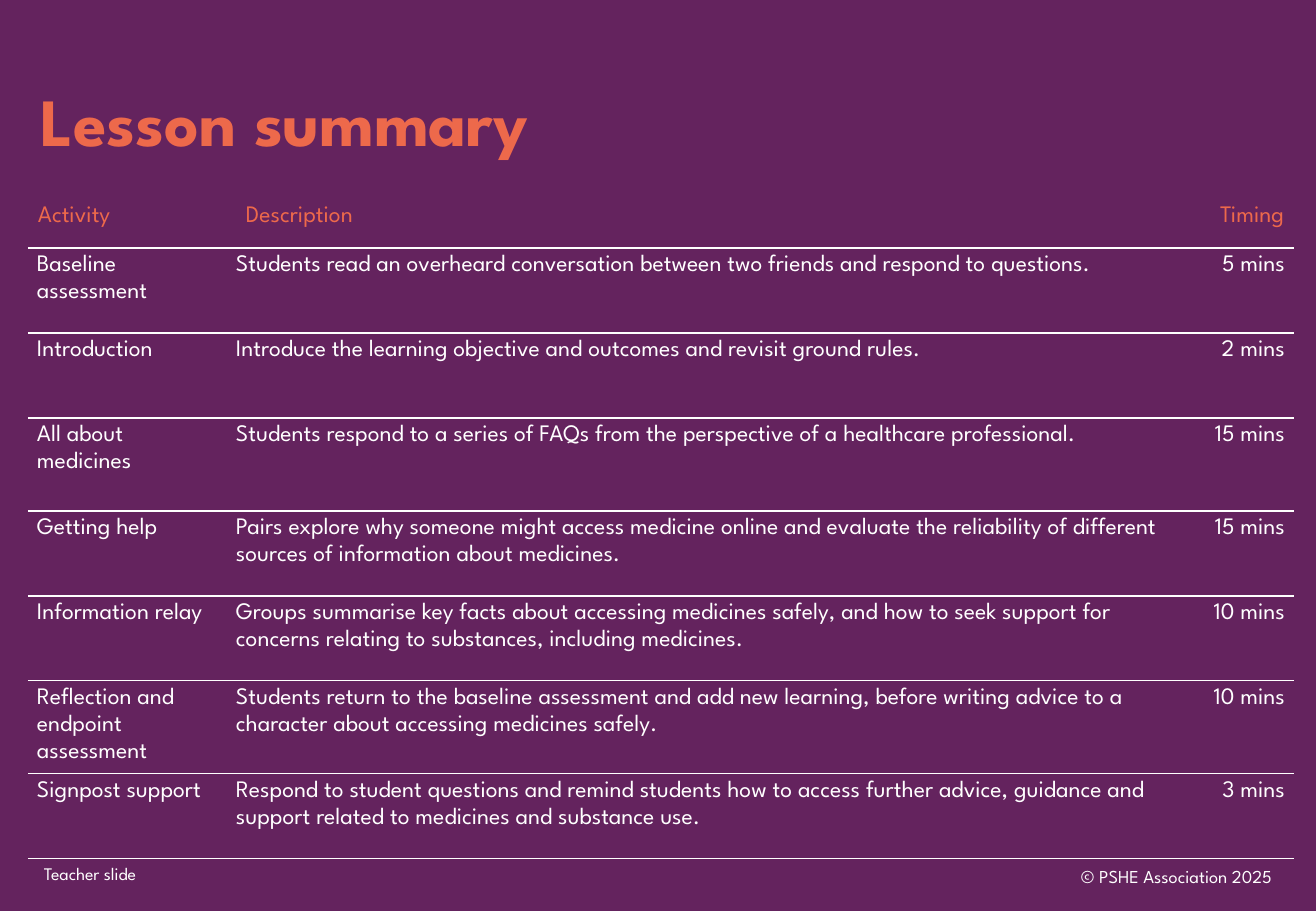
import pptx
import pptx.dml.color
import pptx.enum.text
import pptx.oxml
import pptx.oxml.ns
import pptx.util

SCALE = 914400 / 121.5  # EMU per px
FONT = "League Spartan"
PURPLE, ORANGE, WHITE = "64235E", "ED694B", "FFFFFF"
ALIGN = pptx.enum.text.PP_ALIGN
ANCHOR = pptx.enum.text.MSO_ANCHOR


def px(length):
    return pptx.util.Emu(round(length * SCALE))


def write(paragraph, text, size, colour, align=ALIGN.LEFT, bold=False):
    paragraph.text = text
    paragraph.alignment = align
    font = paragraph.runs[0].font
    font_format = {"name": FONT, "size": pptx.util.Pt(size), "bold": bold}
    for name, value in font_format.items():
        setattr(font, name, value)
    font.color.rgb = pptx.dml.color.RGBColor.from_string(colour)


presentation = pptx.Presentation()
presentation.slide_width, presentation.slide_height = px(1316), px(911)
slide = presentation.slides.add_slide(presentation.slide_layouts[5])
slide.background.fill.solid()
slide.background.fill.fore_color.rgb = pptx.dml.color.RGBColor.from_string(PURPLE)

# Title
title = slide.shapes.title
title_format = {"left": 28, "top": 79, "width": 996, "height": 92}
for name, value in title_format.items():
    setattr(title, name, px(value))
title.text_frame.auto_size = pptx.enum.text.MSO_AUTO_SIZE.NONE
title.text_frame.vertical_anchor = ANCHOR.MIDDLE
write(title.text_frame.paragraphs[0], "Lesson summary", 40, ORANGE, bold=True)
title.text_frame.paragraphs[0].line_spacing = 0.9

# Lesson plan
lesson_rows = [
    ("Activity", "Description", "Timing"),
    ("Baseline assessment",
     "Students read an overheard conversation between two friends and respond to questions.",
     "5 mins"),
    ("Introduction",
     "Introduce the learning objective and outcomes and revisit ground rules.",
     "2 mins"),
    ("All about medicines",
     "Students respond to a series of FAQs from the perspective of a healthcare professional.",
     "15 mins"),
    ("Getting help",
     "Pairs explore why someone might access medicine online and evaluate the reliability "
     "of different sources of information about medicines.",
     "15 mins"),
    ("Information relay",
     "Groups summarise key facts about accessing medicines safely, and how to seek support "
     "for concerns relating to substances, including medicines.",
     "10 mins"),
    ("Reflection and endpoint assessment",
     "Students return to the baseline assessment and add new learning, before writing advice "
     "to a character about accessing medicines safely.",
     "10 mins"),
    ("Signpost support",
     "Respond to student questions and remind students how to access further advice, guidance "
     "and support related to medicines and substance use.",
     "3 mins"),
]
column_widths = [199, 953, 114]
row_heights = [62, 85, 85, 93, 85, 85, 93, 85]
column_aligns = [ALIGN.LEFT, ALIGN.LEFT, ALIGN.RIGHT]

frame = slide.shapes.add_table(len(lesson_rows), len(column_widths), px(28), px(186),
                               px(sum(column_widths)), px(sum(row_heights)))
table = frame.table
table.first_row = table.horz_banding = False
# Plain table style without grid lines
style = table._tbl.tblPr.find(pptx.oxml.ns.qn("a:tableStyleId"))
style.text = "{2D5ABB26-0587-4C30-8999-92F81FD0307C}"
for column, width in zip(table.columns, column_widths):
    column.width = px(width)
for row, height in zip(table.rows, row_heights):
    row.height = px(height)

for row_index, texts in enumerate(lesson_rows):
    is_header = row_index == 0
    for column_index, text in enumerate(texts):
        cell = table.cell(row_index, column_index)
        cell.fill.background()
        if is_header:
            margins = {"left": 19 if column_index == 1 else 10,
                       "top": 10, "right": 10, "bottom": 10}
        else:
            margins = {"left": 9, "top": 2, "right": 9, "bottom": 10}
        for side, margin in margins.items():
            setattr(cell, f"margin_{side}", px(margin))
        cell.vertical_anchor = ANCHOR.MIDDLE if is_header else ANCHOR.TOP
        paragraph = cell.text_frame.paragraphs[0]
        write(paragraph, text, 14, ORANGE if is_header else WHITE, column_aligns[column_index])
        if not is_header:
            paragraph.line_spacing = pptx.util.Pt(16)
        # Rule under each row
        rule = pptx.oxml.parse_xml(
            f'<a:lnB {pptx.oxml.ns.nsdecls("a")} w="12700"><a:solidFill>'
            f'<a:srgbClr val="{WHITE}"/></a:solidFill></a:lnB>')
        cell._tc.get_or_add_tcPr().insert(0, rule)

# Footer
footers = [
    ("Teacher slide", (32, 857, 824, 35), 10.5, ALIGN.LEFT, ANCHOR.TOP),
    ("© PSHE Association 2025", (988, 852, 296, 49), 10.8, ALIGN.RIGHT, ANCHOR.MIDDLE),
]
for text, box, size, align, anchor in footers:
    text_frame = slide.shapes.add_textbox(*map(px, box)).text_frame
    text_frame.word_wrap = True
    text_frame.vertical_anchor = anchor
    write(text_frame.paragraphs[0], text, size, WHITE, align)

presentation.save("out.pptx")
